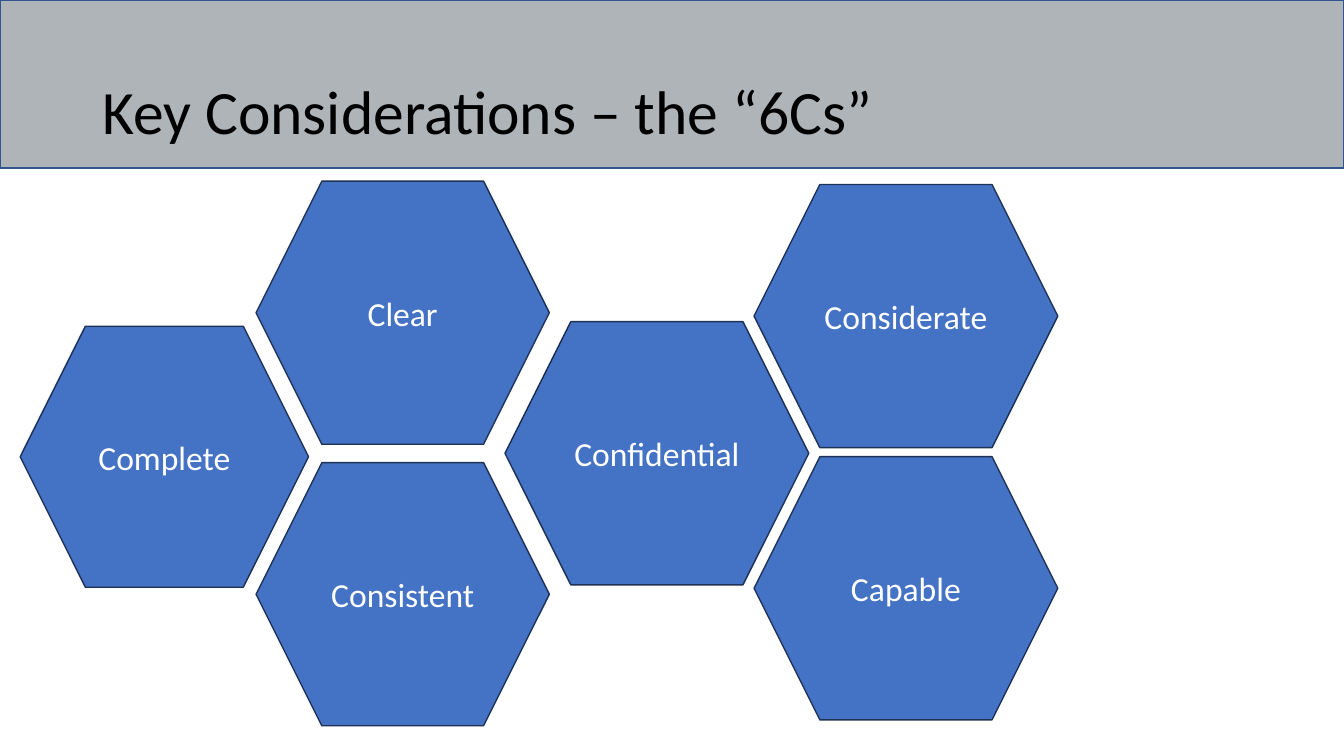
from dataclasses import dataclass

from pptx import Presentation
from pptx.dml.color import RGBColor
from pptx.enum.shapes import MSO_SHAPE
from pptx.enum.text import MSO_ANCHOR, PP_ALIGN
from pptx.util import Pt


@dataclass(frozen=True)
class Theme:
    font: str = "Calibri"
    title_size: int = 44
    label_size: int = 24
    line_width: int = 1
    banner_fill: str = "AEB4B8"
    banner_line: str = "325491"
    hexagon_fill: str = "4472C4"
    hexagon_line: str = "1E3256"
    title_color: str = "000000"
    label_color: str = "FFFFFF"


theme = Theme()


def add_filled_shape(kind, left, top, width, height, fill, line):
    shape = slide.shapes.add_shape(kind, Pt(left), Pt(top), Pt(width), Pt(height))
    shape.shadow.inherit = False
    shape.fill.solid()
    shape.fill.fore_color.rgb = RGBColor.from_string(fill)
    shape.line.color.rgb = RGBColor.from_string(line)
    shape.line.width = Pt(theme.line_width)
    return shape


def write_text(shape, text, size, color, alignment):
    frame = shape.text_frame
    frame.text = text
    frame.word_wrap = True
    frame.vertical_anchor = MSO_ANCHOR.MIDDLE
    paragraph = frame.paragraphs[0]
    paragraph.alignment = alignment
    font = paragraph.runs[0].font
    font.name = theme.font
    font.size = Pt(size)
    font.color.rgb = RGBColor.from_string(color)
    return paragraph


presentation = Presentation()
presentation.slide_width = Pt(960)
presentation.slide_height = Pt(540)
slide = presentation.slides.add_slide(presentation.slide_layouts[6])

add_filled_shape(MSO_SHAPE.RECTANGLE, 0, 0, 960, 120, theme.banner_fill, theme.banner_line)

title = slide.shapes.add_textbox(Pt(66), Pt(44), Pt(828), Pt(75.6))
title_paragraph = write_text(
    title, "Key Considerations – the “6Cs”", theme.title_size, theme.title_color, PP_ALIGN.LEFT
)
title_paragraph.line_spacing = 0.9

hexagon_columns = [
    (360.7, 217, 188, [("Confidential", 229.8)]),
    (14.4, 206, 186.5, [("Complete", 233)]),
    (182.9, 209.5, 188, [("Clear", 129.4), ("Consistent", 330.5)]),
    (538.6, 217, 188, [("Considerate", 131.8), ("Capable", 326.2)]),
]
for left, width, height, hexagons in hexagon_columns:
    for label, top in hexagons:
        hexagon = add_filled_shape(
            MSO_SHAPE.HEXAGON, left, top, width, height, theme.hexagon_fill, theme.hexagon_line
        )
        write_text(hexagon, label, theme.label_size, theme.label_color, PP_ALIGN.CENTER)

presentation.save("out.pptx")
